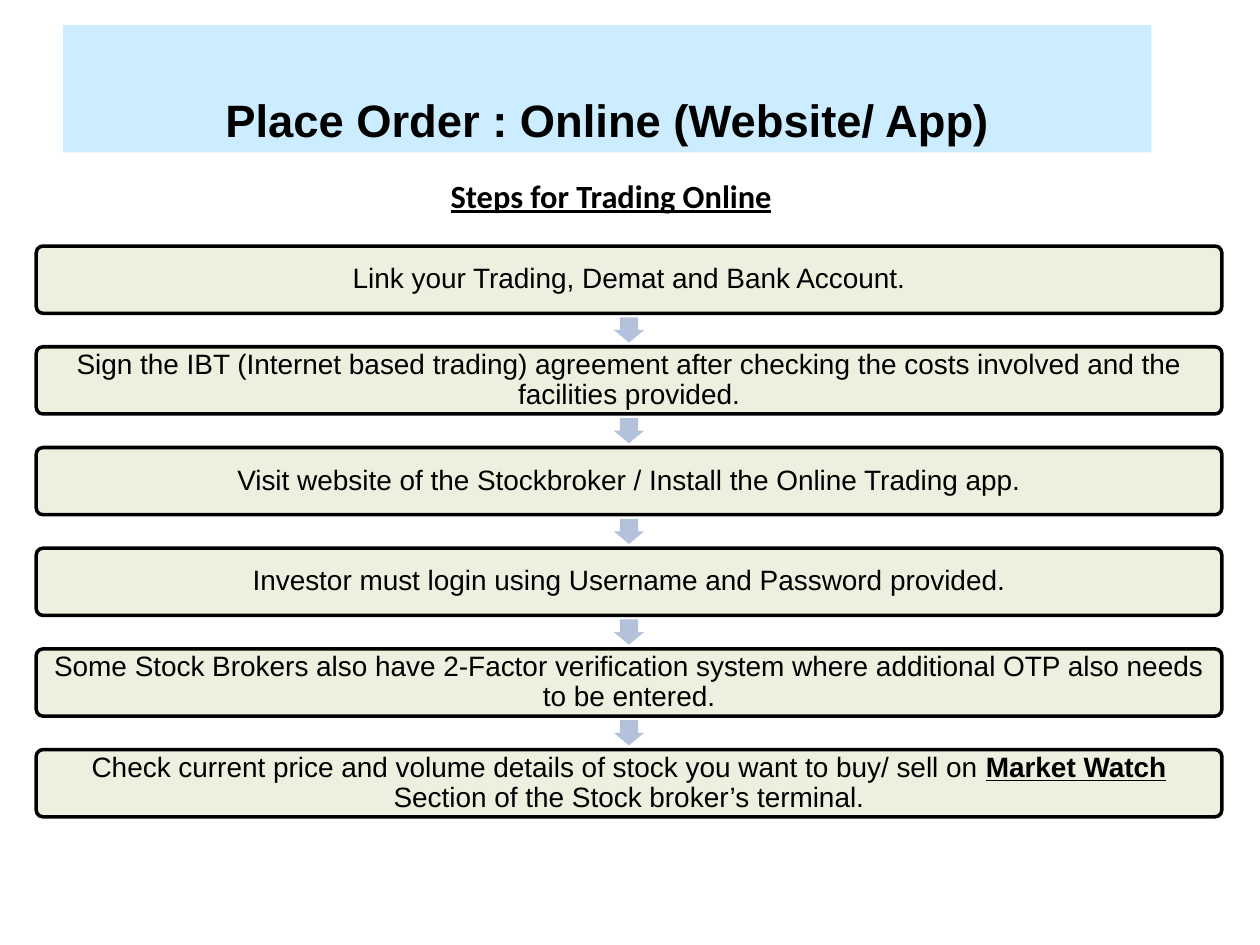
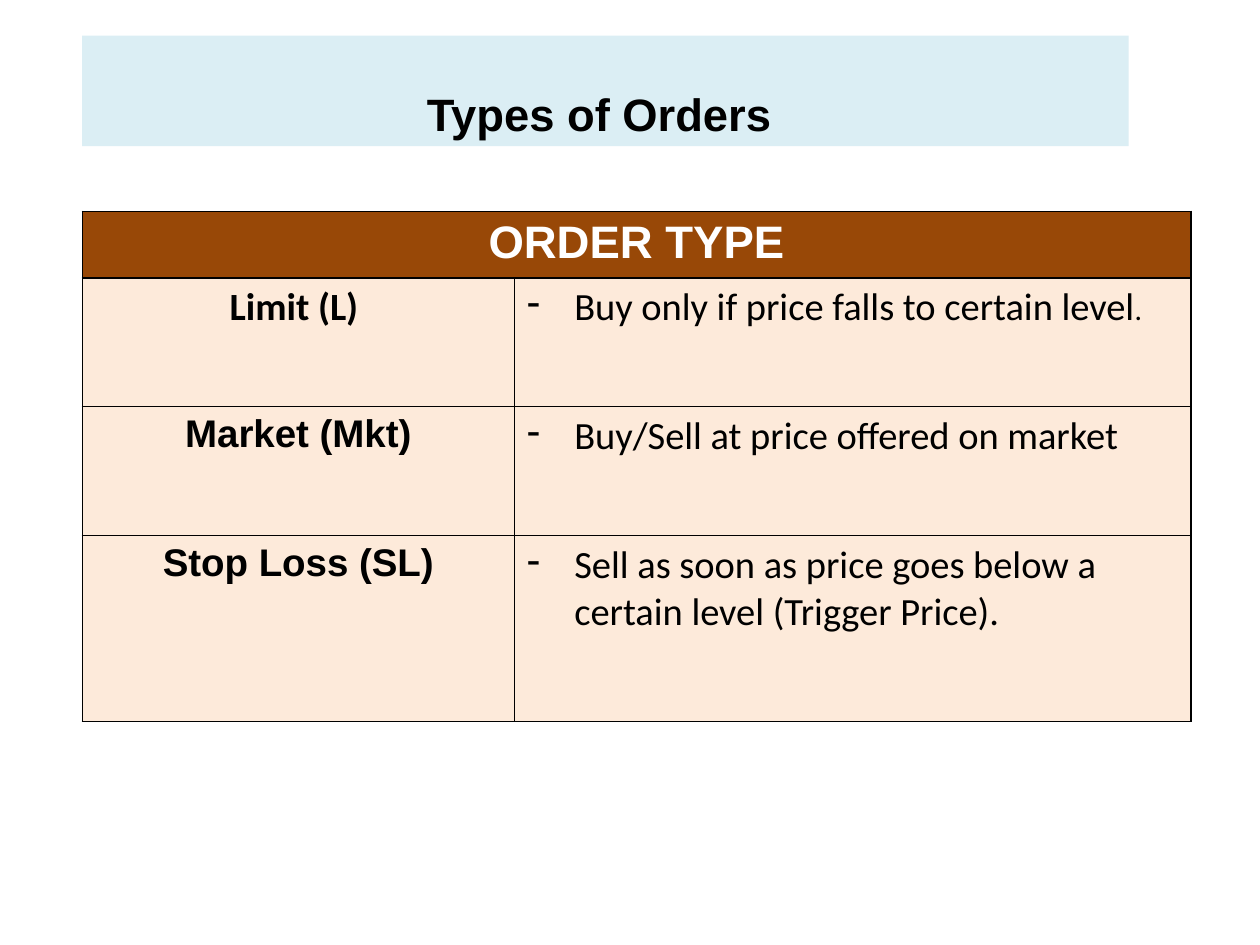
from lxml import etree
from pptx import Presentation
from pptx.dml.color import RGBColor
from pptx.enum.shapes import MSO_SHAPE
from pptx.enum.text import MSO_ANCHOR, MSO_AUTO_SIZE, PP_ALIGN
from pptx.oxml.ns import qn
from pptx.util import Pt

BOX, ARROW = MSO_SHAPE.ROUNDED_RECTANGLE, MSO_SHAPE.DOWN_ARROW
CENTER, LEFT = PP_ALIGN.CENTER, PP_ALIGN.LEFT
MIDDLE, BOTTOM = MSO_ANCHOR.MIDDLE, MSO_ANCHOR.BOTTOM
NO_FIT = MSO_AUTO_SIZE.NONE
TITLE_ONLY = 5

HEAD_FONT, BODY_FONT = "Arial", "Calibri"
BLACK, WHITE = "000000", "FFFFFF"
SKY, PALE_BLUE = "CCECFF", "DBEEF4"
STEP_FILL, ARROW_FILL = "EBF1DE", "B3C1DB"
HEADER_FILL, ROW_FILL = "984807", "FDEADA"

# Each step is a list of (text, emphasised) runs
STEPS = [
    [("Link your Trading, Demat and Bank Account.", False)],
    [("Sign the IBT (Internet based trading) agreement after checking the "
      "costs involved and the facilities provided.", False)],
    [("Visit website of the Stockbroker / Install the Online Trading app.",
      False)],
    [("Investor must login using Username and Password provided.", False)],
    [("Some Stock Brokers also have 2-Factor verification system where "
      "additional OTP also needs to be entered.", False)],
    [("Check current price and volume details of stock you want to buy/ "
      "sell on ", False),
     ("Market Watch", True),
     (" Section of the Stock broker’s terminal.", False)],
]

# Order name, its font, and the (text, size) runs that explain it
ORDERS = [
    ("Limit (L) ", BODY_FONT,
     [("Buy only if price falls to certain level", 22), (".", 17)]),
    ("Market (Mkt)", HEAD_FONT, [("Buy/Sell at price offered on market", 22)]),
    ("Stop Loss (SL)", HEAD_FONT,
     [("Sell as soon as price goes below a certain level (Trigger Price).",
       22)]),
]


def rgb(color):
    return RGBColor.from_string(color)


def fill(target, color):
    target.fill.solid()
    target.fill.fore_color.rgb = rgb(color)


def add_run(p, text, size, font, color=BLACK, bold=False, underline=False):
    r = p.add_run()
    r.text = text
    r.font.size, r.font.name = Pt(size), font
    r.font.bold, r.font.underline = bold, underline
    r.font.color.rgb = rgb(color)


def set_frame(tf, anchor, side, top):
    tf.word_wrap = True
    tf.auto_size = NO_FIT
    tf.vertical_anchor = anchor
    tf.margin_left = tf.margin_right = Pt(side)
    tf.margin_top = tf.margin_bottom = Pt(top)


def first_paragraph(tf, align=CENTER, spacing=1.0):
    p = tf.paragraphs[0]
    p.alignment, p.line_spacing = align, spacing
    return p


def add_titled_slide(prs, title, color, left, top, width, height):
    s = prs.slides.add_slide(prs.slide_layouts[TITLE_ONLY])
    sp = s.shapes.title
    sp.left, sp.top, sp.width, sp.height = map(Pt, (left, top, width, height))
    fill(sp, color)
    set_frame(sp.text_frame, BOTTOM, 6, 3)
    p = first_paragraph(sp.text_frame, spacing=0.9)
    add_run(p, title, 25.9, HEAD_FONT, bold=True)
    return s


def add_subtitle(s, text, left, top, width, height):
    sp = s.shapes.add_textbox(*map(Pt, (left, top, width, height)))
    set_frame(sp.text_frame, MIDDLE, 6, 3)
    p = first_paragraph(sp.text_frame)
    add_run(p, text, 18.5, BODY_FONT, bold=True, underline=True)


def add_plain_shape(s, kind, color, left, top, width, height):
    sp = s.shapes.add_shape(kind, *map(Pt, (left, top, width, height)))
    sp.shadow.inherit = False
    fill(sp, color)
    sp.line.fill.background()
    return sp


def add_step(s, runs, left, top, width, height):
    sp = add_plain_shape(s, BOX, STEP_FILL, left, top, width, height)
    sp.adjustments[0] = 0.1
    sp.line.color.rgb = rgb(BLACK)
    sp.line.width = Pt(2)
    set_frame(sp.text_frame, MIDDLE, 5.5, 5)
    p = first_paragraph(sp.text_frame, spacing=0.9)
    for text, strong in runs:
        add_run(p, text, 16, HEAD_FONT, bold=strong, underline=strong)


def add_step_chain(s, steps, left, top, width, height, pitch):
    arrow_w, arrow_h = 17.3, 14.4
    for i, runs in enumerate(steps):
        y = top + i * pitch
        if i:  # arrow centred in the gap above this step
            gap_middle = y - (pitch - height) / 2
            sp = add_plain_shape(s, ARROW, ARROW_FILL,
                                 left + (width - arrow_w) / 2,
                                 gap_middle - arrow_h / 2, arrow_w, arrow_h)
            sp.adjustments[0], sp.adjustments[1] = 0.6, 0.5
        add_step(s, runs, left, y, width, height)


def set_borders(cell, color, width):
    tcPr = cell._tc.get_or_add_tcPr()
    for i, side in enumerate(("lnL", "lnR", "lnT", "lnB")):
        ln = etree.Element(qn("a:" + side), w=str(Pt(width)))
        solid = etree.SubElement(ln, qn("a:solidFill"))
        etree.SubElement(solid, qn("a:srgbClr"), val=color)
        tcPr.insert(i, ln)


def set_dash_bullet(p, indent):
    pPr = p._p.get_or_add_pPr()
    pPr.set("marL", str(Pt(indent)))
    pPr.set("indent", str(-Pt(indent)))
    etree.SubElement(pPr, qn("a:buChar"), char="-")


def add_order_table(s, left, top, columns, rows):
    frame = s.shapes.add_table(len(rows), len(columns), Pt(left), Pt(top),
                               Pt(sum(columns)), Pt(sum(rows)))
    table = frame.table
    for col, width in zip(table.columns, columns):
        col.width = Pt(width)
    for row, height in zip(table.rows, rows):
        row.height = Pt(height)
    for i, row in enumerate(table.rows):
        for cell in row.cells:
            fill(cell, ROW_FILL if i else HEADER_FILL)
            set_borders(cell, BLACK, 1)

    # Header across both columns
    header = table.cell(0, 0)
    header.merge(table.cell(0, 1))
    add_run(first_paragraph(header.text_frame), "ORDER TYPE", 26, HEAD_FONT,
            WHITE, bold=True)

    # One row for each order type
    for i, (name, font, runs) in enumerate(ORDERS, start=1):
        p = first_paragraph(table.cell(i, 0).text_frame)
        add_run(p, name, 22, font, bold=True)
        p = first_paragraph(table.cell(i, 1).text_frame, LEFT)
        set_dash_bullet(p, 27)
        for text, size in runs:
            add_run(p, text, size, BODY_FONT)


def main():
    prs = Presentation()
    prs.slide_width, prs.slide_height = Pt(720), Pt(540)

    # Slide 1: steps of online trading
    s = add_titled_slide(prs, "Place Order : Online (Website/ App)", SKY,
                         36, 14.4, 622, 72.7)
    add_subtitle(s, "Steps for Trading Online", 14.4, 97, 669.6, 29)
    add_step_chain(s, STEPS, 20.7, 140.6, 677.5, 38.4, 57.55)

    # Slide 2: order types
    s = add_titled_slide(prs, "Types of Orders ", PALE_BLUE,
                         47, 20.3, 598, 63.2)
    add_order_table(s, 47, 120.8, (247, 386.6), (38, 73.6, 73.6, 106.4))

    prs.save("out.pptx")


if __name__ == "__main__":
    main()
